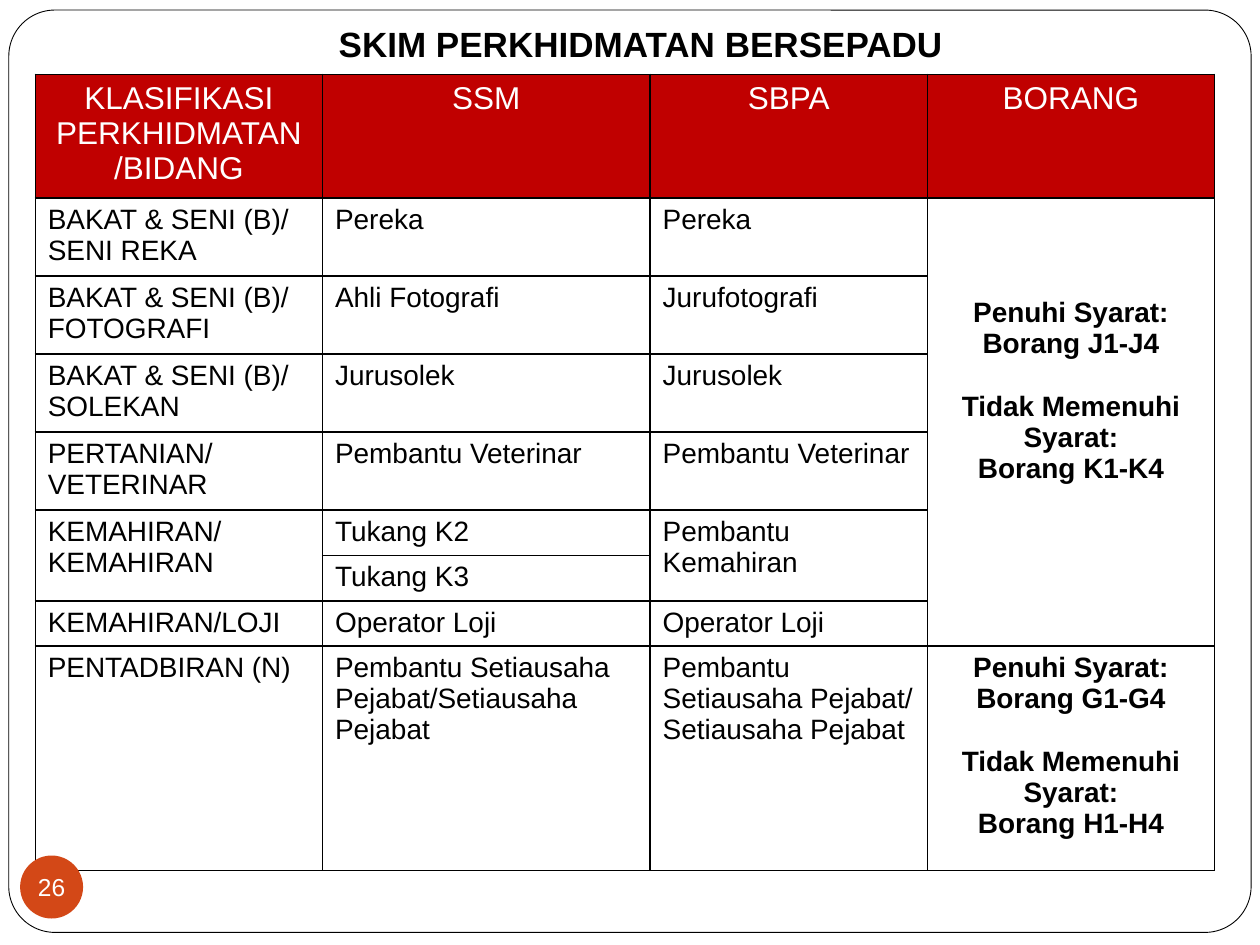
from typing import NamedTuple

from lxml import etree
from pptx import Presentation
from pptx.dml.color import RGBColor
from pptx.enum import shapes, text
from pptx.oxml import ns
from pptx.util import Inches, Pt

BLACK = RGBColor(0x00, 0x00, 0x00)
WHITE = RGBColor(0xFF, 0xFF, 0xFF)
RED = RGBColor(0xC0, 0x00, 0x00)
ORANGE = RGBColor(0xD3, 0x48, 0x17)
FONT = "Arial"

COLUMN_WIDTHS = (2.28, 2.6, 2.2, 2.28)
ROW_HEIGHTS = (0.98, 0.62, 0.62, 0.62, 0.62, 0.36, 0.36, 0.36, 1.78)
HEADERS = ("KLASIFIKASI PERKHIDMATAN /BIDANG", "SSM", "SBPA", "BORANG")


class Scheme(NamedTuple):
    field: str
    ssm: str
    sbpa: str


class Forms(NamedTuple):
    row: int
    last_row: int
    met: str
    unmet: str
    top_margin: float


SCHEMES = (
    Scheme("BAKAT & SENI (B)/ SENI REKA", "Pereka", "Pereka"),
    Scheme("BAKAT & SENI (B)/ FOTOGRAFI", "Ahli Fotografi", "Jurufotografi"),
    Scheme("BAKAT & SENI (B)/ SOLEKAN", "Jurusolek", "Jurusolek"),
    Scheme("PERTANIAN/ VETERINAR", "Pembantu Veterinar", "Pembantu Veterinar"),
    Scheme("KEMAHIRAN/ KEMAHIRAN", "Tukang K2", "Pembantu Kemahiran"),
    Scheme("", "Tukang K3", ""),
    Scheme("KEMAHIRAN/LOJI", "Operator Loji", "Operator Loji"),
    Scheme("PENTADBIRAN (N)", "Pembantu Setiausaha Pejabat/Setiausaha Pejabat",
           "Pembantu Setiausaha Pejabat/\nSetiausaha Pejabat"),
)
FORMS = (
    Forms(1, 7, "Borang J1-J4", "Borang K1-K4", 0.79),
    Forms(8, 8, "Borang G1-G4", "Borang H1-H4", 0.05),
)


def write(frame, lines: list[str], size: float, color: RGBColor,
          bold: bool = False, centred: bool = True) -> None:
    """Write one paragraph per line."""
    for index, line in enumerate(lines):
        para = frame.add_paragraph() if index else frame.paragraphs[0]
        para.alignment = text.PP_ALIGN.CENTER if centred else text.PP_ALIGN.LEFT
        span = para.add_run()
        span.text = line
        span.font.name = FONT
        span.font.size = Pt(size)
        span.font.bold = bold
        span.font.color.rgb = color


def add_borders(cell) -> None:
    properties = cell._tc.get_or_add_tcPr()
    for side in ("lnL", "lnR", "lnT", "lnB"):
        line = etree.SubElement(properties, ns.qn(f"a:{side}"), w=str(Pt(1)))
        fill = etree.SubElement(line, ns.qn("a:solidFill"))
        etree.SubElement(fill, ns.qn("a:srgbClr"), val=str(BLACK))


def add_shape(slide, kind, left: float, top: float, width: float, height: float,
              fill: RGBColor):
    shape = slide.shapes.add_shape(
        kind, Inches(left), Inches(top), Inches(width), Inches(height))
    shape.shadow.inherit = False
    shape.fill.solid()
    shape.fill.fore_color.rgb = fill
    return shape


def add_frame(slide) -> None:
    frame = add_shape(slide, shapes.MSO_SHAPE.ROUNDED_RECTANGLE,
                      0.07, 0.08, 9.86, 7.32, WHITE)
    frame.adjustments[0] = 0.05
    frame.line.color.rgb = BLACK
    frame.line.width = Pt(0.5)


def add_scheme_table(slide) -> None:
    table = slide.shapes.add_table(
        len(ROW_HEIGHTS), len(COLUMN_WIDTHS), Inches(0.28), Inches(0.59),
        Inches(sum(COLUMN_WIDTHS)), Inches(sum(ROW_HEIGHTS))).table
    table.first_row = table.horz_banding = False
    for column, width in zip(table.columns, COLUMN_WIDTHS):
        column.width = Inches(width)
    for row, height in zip(table.rows, ROW_HEIGHTS):
        row.height = Inches(height)
    for cell in table.iter_cells():
        add_borders(cell)
        cell.fill.background()

    for column, header in enumerate(HEADERS):
        cell = table.cell(0, column)
        cell.fill.solid()
        cell.fill.fore_color.rgb = RED
        write(cell.text_frame, [header], 18, WHITE)

    for row, scheme in enumerate(SCHEMES, start=1):
        for column, value in enumerate(scheme):
            if value:
                write(table.cell(row, column).text_frame, value.split("\n"),
                      16, BLACK, centred=False)
    for column in (0, 2):
        table.cell(5, column).merge(table.cell(6, column))

    for forms in FORMS:
        cell = table.cell(forms.row, 3)
        if forms.last_row > forms.row:
            cell.merge(table.cell(forms.last_row, 3))
        cell.margin_top = Inches(forms.top_margin)
        write(cell.text_frame,
              [f"Penuhi Syarat: {forms.met}", "Tidak Memenuhi Syarat:", forms.unmet],
              16, BLACK, bold=True)
        cell.text_frame.paragraphs[1].space_before = Pt(18)


def place_title(slide) -> None:
    title = slide.shapes.title
    title.left, title.top = Inches(0.71), Inches(0)
    title.width, title.height = Inches(8.75), Inches(0.61)
    frame = title.text_frame
    frame.word_wrap = True
    frame.auto_size = text.MSO_AUTO_SIZE.NONE
    frame.vertical_anchor = text.MSO_ANCHOR.BOTTOM
    frame.margin_bottom = Inches(0.1)
    write(frame, ["SKIM PERKHIDMATAN BERSEPADU"], 20, BLACK, bold=True)
    slide.shapes._spTree.append(title.element)  # in front of the frame


def add_page_number(slide) -> None:
    badge = add_shape(slide, shapes.MSO_SHAPE.OVAL, 0.16, 6.79, 0.5, 0.5, ORANGE)
    badge.line.fill.background()
    frame = badge.text_frame
    frame.word_wrap = False
    frame.vertical_anchor = text.MSO_ANCHOR.MIDDLE
    frame.margin_left = frame.margin_right = Inches(0)
    frame.margin_top = frame.margin_bottom = Inches(0)
    write(frame, ["26"], 14, WHITE)


def main() -> None:
    deck = Presentation()
    deck.slide_width, deck.slide_height = Inches(10), Inches(7.5)
    slide = deck.slides.add_slide(deck.slide_layouts[5])
    add_frame(slide)
    add_scheme_table(slide)
    place_title(slide)
    add_page_number(slide)
    deck.save("out.pptx")


if __name__ == "__main__":
    main()
